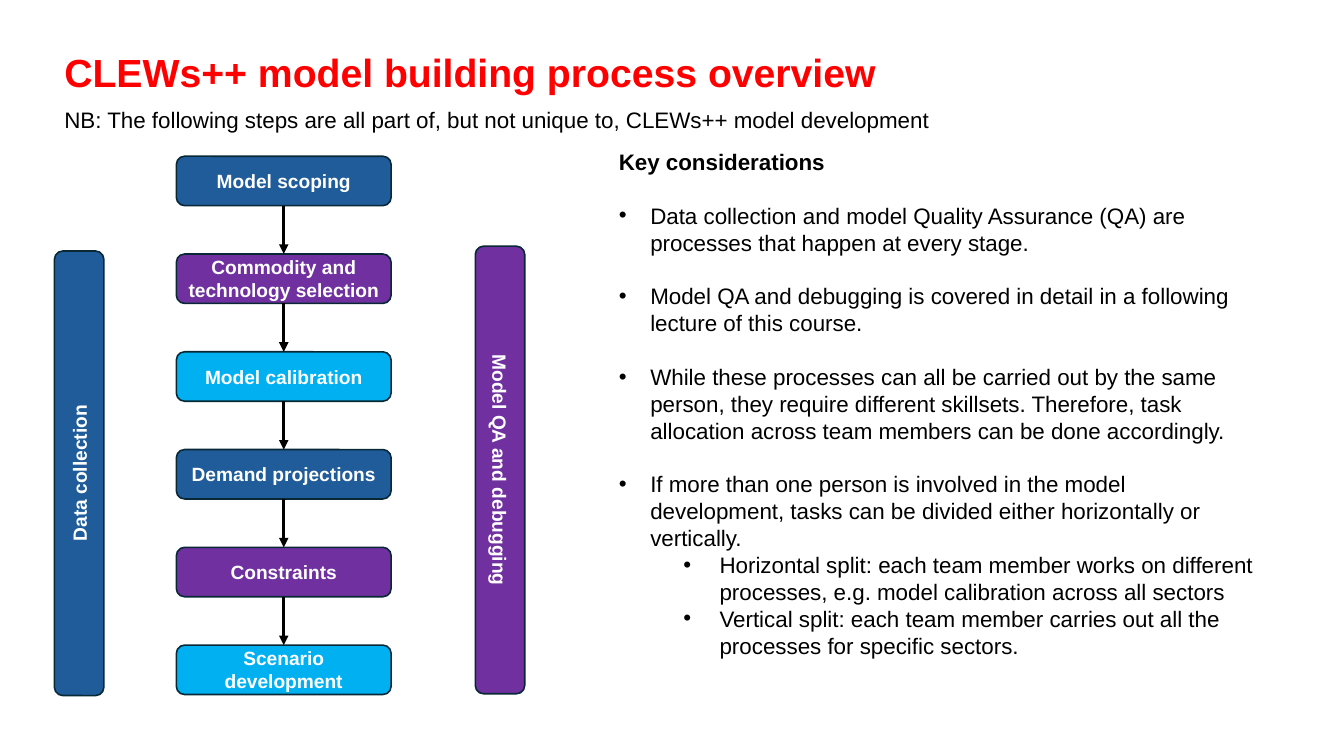
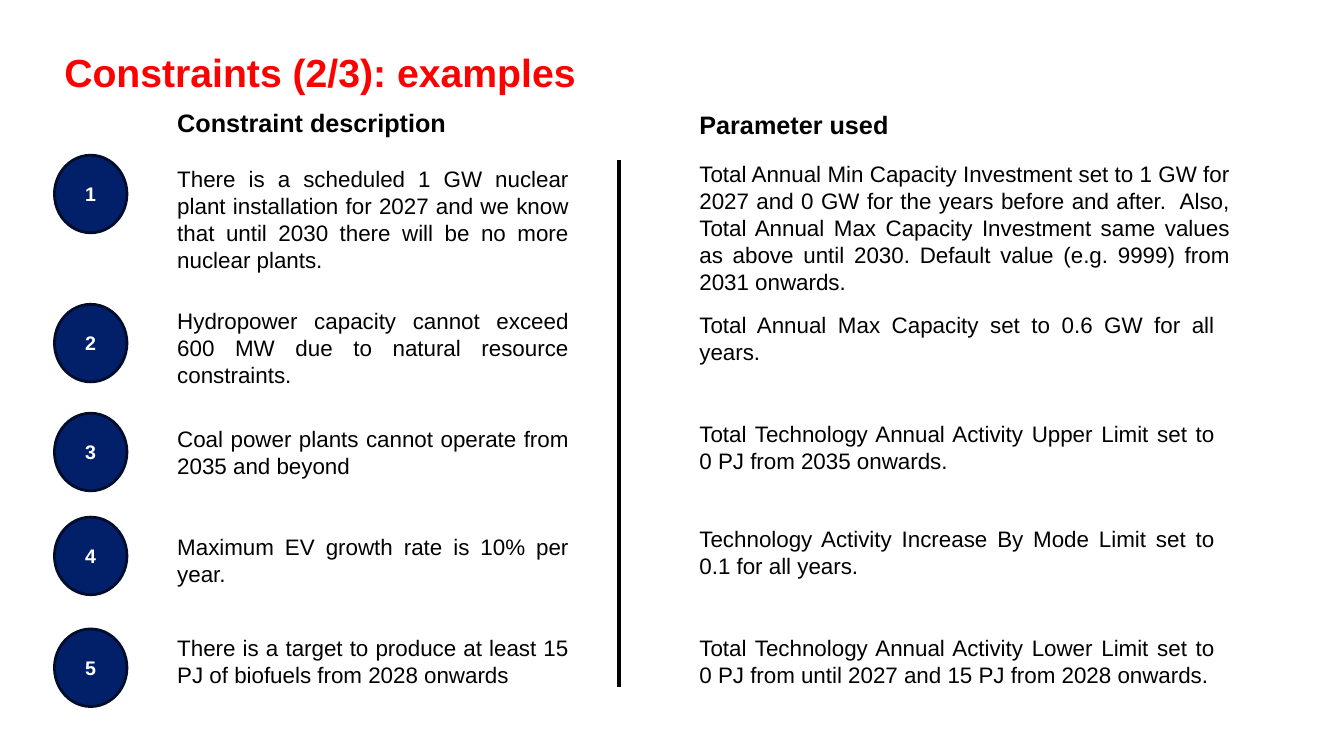
from collections import namedtuple

from lxml import etree
from pptx import Presentation
from pptx.dml.color import RGBColor
from pptx.enum.shapes import MSO_CONNECTOR, MSO_SHAPE
from pptx.enum.text import MSO_ANCHOR, PP_ALIGN
from pptx.oxml.ns import qn
from pptx.util import Pt

Box = namedtuple("Box", "left top width height")
Row = namedtuple("Row", "badge_top description_top parameter_top parameter_width description parameter")

ROUNDED = MSO_SHAPE.ROUNDED_RECTANGLE
ELLIPSE = MSO_SHAPE.OVAL
STRAIGHT = MSO_CONNECTOR.STRAIGHT
TOP, MIDDLE, BOTTOM = MSO_ANCHOR.TOP, MSO_ANCHOR.MIDDLE, MSO_ANCHOR.BOTTOM
LEFT, CENTER, JUSTIFY = PP_ALIGN.LEFT, PP_ALIGN.CENTER, PP_ALIGN.JUSTIFY

FONT = "Arial"
COLORS = {
    "title": "FF0000",
    "text": "000000",
    "light": "FFFFFF",
    "blue": "1F5C99",
    "purple": "7030A0",
    "cyan": "00B0F0",
    "step_line": "082836",
    "badge": "012069",
    "badge_line": "000D2C",
}
TITLE_BOX = Box(38.9, 25.9, 828, 46.5)
TEXT_INSETS = (7.2, 3.6)
STEP_INSETS = (5.8, 2.9)
STEP_HEIGHT = 35.3
BODY_SIZE = 16
BLANK_LINE = 19.2

STEPS = [
    ("Model scoping", "blue"),
    ("Commodity and technology selection", "purple"),
    ("Model calibration", "cyan"),
    ("Demand projections", "blue"),
    ("Constraints", "purple"),
    ("Scenario development", "cyan"),
]
CONSIDERATIONS = [
    "Data collection and model Quality Assurance (QA) are processes that happen at every stage.",
    "Model QA and debugging is covered in detail in a following lecture of this course.",
    "While these processes can all be carried out by the same person, they require different skillsets. "
    "Therefore, task allocation across team members can be done accordingly.",
    "If more than one person is involved in the model development, tasks can be divided either "
    "horizontally or vertically.",
]
SPLITS = [
    "Horizontal split: each team member works on different processes, e.g. model calibration across all sectors",
    "Vertical split: each team member carries out all the processes for specific sectors.",
]
ROWS = [
    Row(110.9, 114.5, 110.9, 393.1,
        "There is a scheduled 1 GW nuclear plant installation for 2027 and we know that until 2030 "
        "there will be no more nuclear plants.",
        "Total Annual Min Capacity Investment set to 1 GW for 2027 and 0 GW for the years before and after.  "
        "Also, Total Annual Max Capacity Investment same values as above until 2030. "
        "Default value (e.g. 9999) from 2031 onwards."),
    Row(217.4, 216, 218.9, 382.3,
        "Hydropower capacity cannot exceed 600 MW due to natural resource constraints.",
        "Total Annual Max Capacity set to 0.6 GW for all years."),
    Row(295.2, 300.2, 296.6, 382.3,
        "Coal power plants cannot operate from 2035 and beyond",
        "Total Technology Annual Activity Upper Limit set to 0 PJ from 2035 onwards."),
    Row(369.4, 377.3, 371.5, 382.3,
        "Maximum EV growth rate is 10% per year.",
        "Technology Activity Increase By Mode Limit set to 0.1 for all years."),
    Row(449.3, 449.3, 449.3, 382.3,
        "There is a target to produce at least 15 PJ of biofuels from 2028 onwards",
        "Total Technology Annual Activity Lower Limit set to 0 PJ from until 2027 and 15 PJ from 2028 onwards."),
]


def color(name):
    return RGBColor.from_string(COLORS[name])


def points(box):
    return [Pt(value) for value in box]


def prepare_frame(shape, insets, anchor):
    frame = shape.text_frame
    frame.word_wrap = True
    frame.vertical_anchor = anchor
    frame.margin_left = frame.margin_right = Pt(insets[0])
    frame.margin_top = frame.margin_bottom = Pt(insets[1])
    return frame


def write(paragraph, text, size=BODY_SIZE, color_name="text", bold=False, align=LEFT):
    paragraph.text = text
    paragraph.alignment = align
    font = paragraph.runs[0].font
    font.name, font.size, font.bold = FONT, Pt(size), bold
    font.color.rgb = color(color_name)


def add_text(slide, box, text, size=BODY_SIZE, color_name="text", bold=False, align=JUSTIFY, anchor=TOP):
    shape = slide.shapes.add_textbox(*points(box))
    paragraph = prepare_frame(shape, TEXT_INSETS, anchor).paragraphs[0]
    write(paragraph, text, size, color_name, bold, align)
    return shape


def add_labelled_shape(slide, kind, box, label, size, fill, line, line_width, insets):
    shape = slide.shapes.add_shape(kind, *points(box))
    shape.shadow.inherit = False
    shape.fill.solid()
    shape.fill.fore_color.rgb = color(fill)
    shape.line.color.rgb = color(line)
    shape.line.width = Pt(line_width)
    paragraph = prepare_frame(shape, insets, MIDDLE).paragraphs[0]
    write(paragraph, label, size, "light", True, CENTER)
    return shape


def add_step(slide, box, label, fill):
    return add_labelled_shape(slide, ROUNDED, box, label, 13.7, fill, "step_line", 1.14, STEP_INSETS)


def add_line(slide, start, end, width):
    connector = slide.shapes.add_connector(STRAIGHT, *points(start + end))
    connector.line.color.rgb = color("text")
    connector.line.width = Pt(width)
    etree.SubElement(connector._element.spPr, qn("a:effectLst"))
    return connector


def add_bullet(paragraph, text, margin, hanging):
    properties = paragraph._p.get_or_add_pPr()
    properties.set("marL", str(Pt(margin)))
    properties.set("indent", str(-Pt(hanging)))
    bullet_color = etree.SubElement(properties, qn("a:buClr"))
    etree.SubElement(bullet_color, qn("a:srgbClr")).set("val", COLORS["text"])
    etree.SubElement(properties, qn("a:buFont")).set("typeface", FONT)
    etree.SubElement(properties, qn("a:buChar")).set("char", "•")
    write(paragraph, text)


def add_titled_slide(presentation, title):
    slide = presentation.slides.add_slide(presentation.slide_layouts[6])
    shape = add_text(slide, TITLE_BOX, title, 28, "title", True, LEFT, BOTTOM)
    shape.text_frame.paragraphs[0].line_spacing = 0.9
    return slide


def add_process_flow(slide, box):
    pitch = (box.height - STEP_HEIGHT) / (len(STEPS) - 1)
    middle = box.left + box.width / 2
    previous = None
    for index, (label, fill) in enumerate(STEPS):
        top = box.top + index * pitch
        step = add_step(slide, Box(box.left, top, box.width, STEP_HEIGHT), label, fill)
        if previous is not None:
            arrow = add_line(slide, (middle, top - pitch + STEP_HEIGHT), (middle, top), 2.28)
            arrow.begin_connect(previous, 2)
            arrow.end_connect(step, 0)
            etree.SubElement(arrow.line._get_or_add_ln(), qn("a:tailEnd")).set("type", "triangle")
        previous = step


def add_side_bar(slide, box, label, fill, rotation):
    left = box.left + (box.width - box.height) / 2
    top = box.top + (box.height - box.width) / 2
    bar = add_step(slide, Box(left, top, box.height, box.width), label, fill)
    bar.rotation = rotation


def add_considerations(slide, box):
    shape = add_text(slide, box, "Key considerations", bold=True, align=LEFT)
    frame = shape.text_frame
    for text in CONSIDERATIONS:
        paragraph = frame.add_paragraph()
        paragraph.space_before = Pt(BLANK_LINE)
        add_bullet(paragraph, text, 22.5, 22.5)
    for text in SPLITS:
        paragraph = frame.add_paragraph()
        paragraph.level = 1
        add_bullet(paragraph, text, 72, 25.9)


def add_constraint_row(slide, box, number, row):
    badge = Box(box.left, row.badge_top, 51.8, 55.4)
    add_labelled_shape(slide, ELLIPSE, badge, str(number), 14, "badge", "badge_line", 2, TEXT_INSETS)
    description_left, parameter_left = box.left + 80.6, box.left + 453.6
    add_text(slide, Box(description_left, row.description_top, 293.8, 46), row.description)
    add_text(slide, Box(parameter_left, row.parameter_top, row.parameter_width, 46), row.parameter)


def add_constraint_table(slide, box):
    for offset, top, heading in ((80.6, 0, "Constraint description"), (453.6, 1, "Parameter used")):
        add_text(slide, Box(box.left + offset, box.top + top, 243.4, 28.8), heading, 18, bold=True)
    for number, row in enumerate(ROWS, 1):
        add_constraint_row(slide, box, number, row)
    divider = box.left + 403.2
    add_line(slide, (divider, box.top + 41.1), (divider, box.top + box.height), 3)


def build_overview(presentation):
    slide = add_titled_slide(presentation, "CLEWs++ model building process overview")
    add_text(slide, Box(38.9, 72, 828, 26.6),
             "NB: The following steps are all part of, but not unique to, CLEWs++ model development")
    add_process_flow(slide, Box(126, 111.6, 153.4, 384.5))
    add_side_bar(slide, Box(38.9, 179.3, STEP_HEIGHT, 317.5), "Data collection", "blue", 270)
    add_side_bar(slide, Box(339.5, 175.9, STEP_HEIGHT, 319.7), "Model QA and debugging", "purple", 90)
    add_considerations(slide, Box(434.9, 102.2, 474.5, 399.6))


def build_constraints(presentation):
    slide = add_titled_slide(presentation, "Constraints (2/3): examples")
    add_constraint_table(slide, Box(38.9, 73.4, 846.7, 417.6))


def main():
    presentation = Presentation()
    presentation.slide_width, presentation.slide_height = Pt(960), Pt(540)
    build_overview(presentation)
    build_constraints(presentation)
    presentation.save("out.pptx")


if __name__ == "__main__":
    main()
